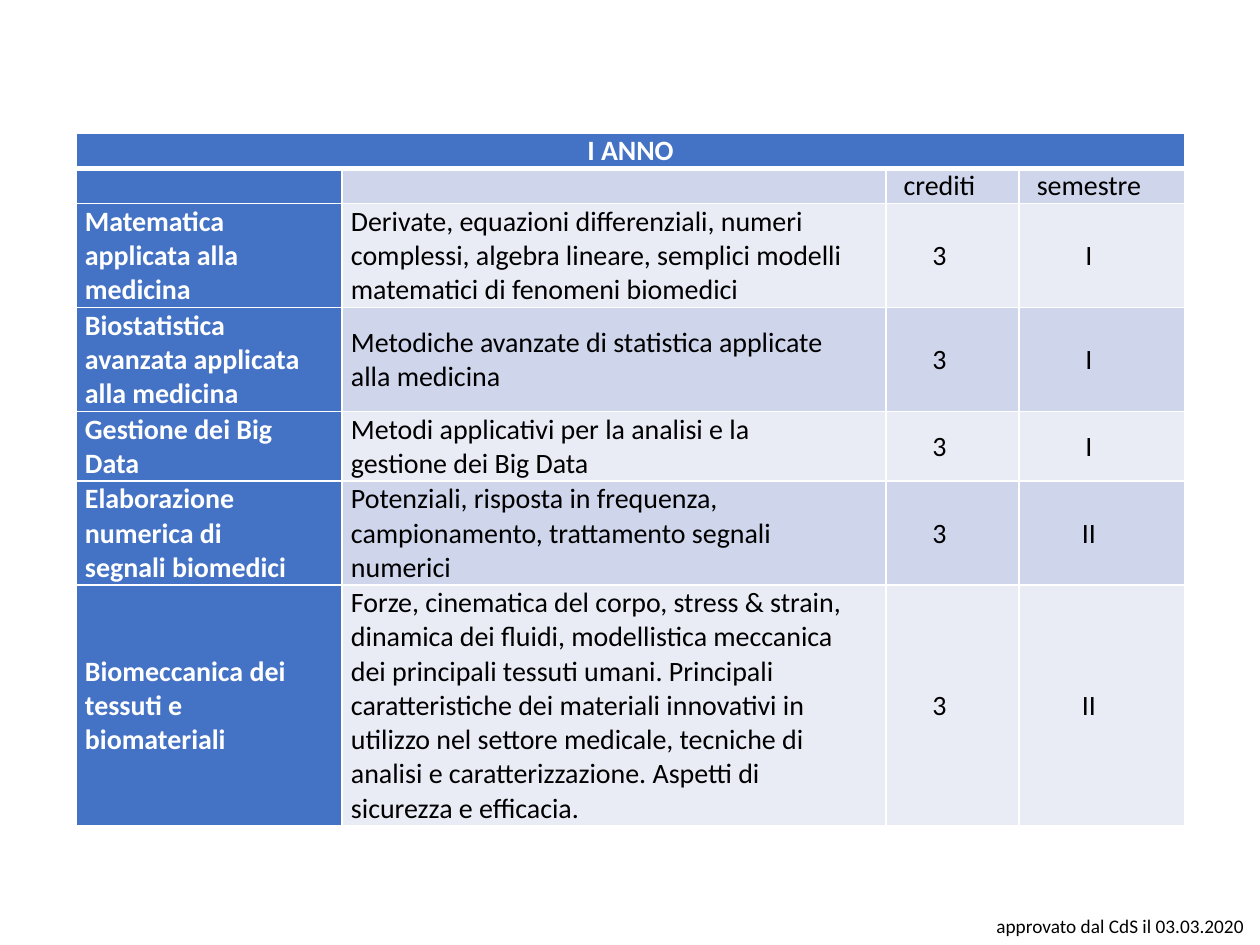
import dataclasses

import lxml.etree
import pptx
import pptx.dml.color
import pptx.enum.text
import pptx.oxml.ns
import pptx.util

PX = 914400 / 126
ALIGN = pptx.enum.text.PP_ALIGN
ANCHOR = pptx.enum.text.MSO_ANCHOR


@dataclasses.dataclass(frozen=True)
class Theme:
    font: str = "Calibri"
    table_size: int = 16
    note_size: int = 11
    accent: str = "4472C4"
    bands: tuple = ("CFD5EA", "E9EBF5")
    light: str = "FFFFFF"
    dark: str = "000000"
    thin: int = 1
    thick: int = 3


THEME = Theme()
HEADING = "I ANNO"
COURSES = [
    ("", "", "crediti", "semestre"),
    ("Matematica applicata alla medicina",
     "Derivate, equazioni differenziali, numeri complessi, algebra lineare, "
     "semplici modelli matematici di fenomeni biomedici", "3", "I"),
    ("Biostatistica avanzata applicata alla medicina",
     "Metodiche avanzate di statistica applicate alla medicina", "3", "I"),
    ("Gestione dei Big Data",
     "Metodi applicativi per la analisi e la gestione dei Big Data", "3", "I"),
    ("Elaborazione numerica di segnali biomedici",
     "Potenziali, risposta in frequenza, campionamento, trattamento segnali "
     "numerici", "3", "II"),
    ("Biomeccanica dei tessuti e biomateriali",
     "Forze, cinematica del corpo, stress & strain, dinamica dei fluidi, "
     "modellistica meccanica dei principali tessuti umani. Principali "
     "caratteristiche dei materiali innovativi in utilizzo nel settore "
     "medicale, tecniche di analisi e caratterizzazione. Aspetti di sicurezza "
     "e efficacia.", "3", "II"),
]
COLUMN_WIDTHS = (266, 544, 133, 166)
ROW_HEIGHTS = (35, 35, 104, 104, 69, 104, 240)
CELL_INSET = 9
RIGHT_INDENT = 26


def emu(px):
    return pptx.util.Emu(round(px * PX))


def rgb(code):
    return pptx.dml.color.RGBColor.from_string(code)


def write(para, text, size, color, bold=False):
    para.font.name = THEME.font
    para.font.size = pptx.util.Pt(size)
    para.font.bold = bold
    para.font.color.rgb = rgb(color)
    if text:
        para.add_run().text = text
    else:
        ending = lxml.etree.SubElement(para._p, pptx.oxml.ns.qn("a:endParaRPr"))
        ending.set("sz", str(size * 100))


def set_borders(cell, top, bottom):
    widths = {"L": THEME.thin, "R": THEME.thin, "T": top, "B": bottom}
    properties = cell._tc.get_or_add_tcPr()
    for side, width in widths.items():
        line = lxml.etree.SubElement(properties, pptx.oxml.ns.qn(f"a:ln{side}"))
        line.set("w", str(pptx.util.Pt(width)))
        fill = lxml.etree.SubElement(line, pptx.oxml.ns.qn("a:solidFill"))
        color = lxml.etree.SubElement(fill, pptx.oxml.ns.qn("a:srgbClr"))
        color.set("val", THEME.light)


def format_cell(cell, text, row, column):
    heading = row == 0
    strong = heading or column == 0
    set_borders(cell, THEME.thick if row == 1 else THEME.thin,
                THEME.thick if heading else THEME.thin)
    cell.fill.solid()
    cell.fill.fore_color.rgb = rgb(
        THEME.accent if strong else THEME.bands[(row - 1) % 2])
    cell.margin_left = cell.margin_right = emu(CELL_INSET)
    cell.margin_top, cell.margin_bottom = emu(1), emu(0)
    cell.vertical_anchor = ANCHOR.MIDDLE if row > 1 else ANCHOR.TOP
    para = cell.text_frame.paragraphs[0]
    para.alignment = ALIGN.CENTER if heading or column > 1 else ALIGN.LEFT
    if not heading:
        para._p.get_or_add_pPr().set("marR", str(emu(RIGHT_INDENT)))
    write(para, text, THEME.table_size,
          THEME.light if strong else THEME.dark, strong)


def add_course_table(page, left, top):
    rows = [(HEADING, "", "", "")] + COURSES
    frame = page.shapes.add_table(
        len(rows), len(COLUMN_WIDTHS), emu(left), emu(top),
        emu(sum(COLUMN_WIDTHS)), emu(sum(ROW_HEIGHTS)))
    table = frame.table
    for column, width in zip(table.columns, COLUMN_WIDTHS):
        column.width = emu(width)
    for row, height in zip(table.rows, ROW_HEIGHTS):
        row.height = emu(height)
    for row, texts in enumerate(rows):
        for column, text in enumerate(texts):
            format_cell(table.cell(row, column), text, row, column)
    table.cell(0, 0).merge(table.cell(0, len(COLUMN_WIDTHS) - 1))


def add_approval_note(page, left, top, width, height):
    box = page.shapes.add_textbox(emu(left), emu(top), emu(width), emu(height))
    box.text_frame.word_wrap = False
    box.text_frame.auto_size = pptx.enum.text.MSO_AUTO_SIZE.SHAPE_TO_FIT_TEXT
    write(box.text_frame.paragraphs[0], "approvato dal CdS il 03.03.2020",
          THEME.note_size, THEME.dark)


def main():
    deck = pptx.Presentation()
    deck.slide_width, deck.slide_height = emu(1260), emu(945)
    page = deck.slides.add_slide(deck.slide_layouts[6])
    add_course_table(page, 76, 133)
    add_approval_note(page, 984, 908, 276, 37)
    deck.save("out.pptx")


if __name__ == "__main__":
    main()
